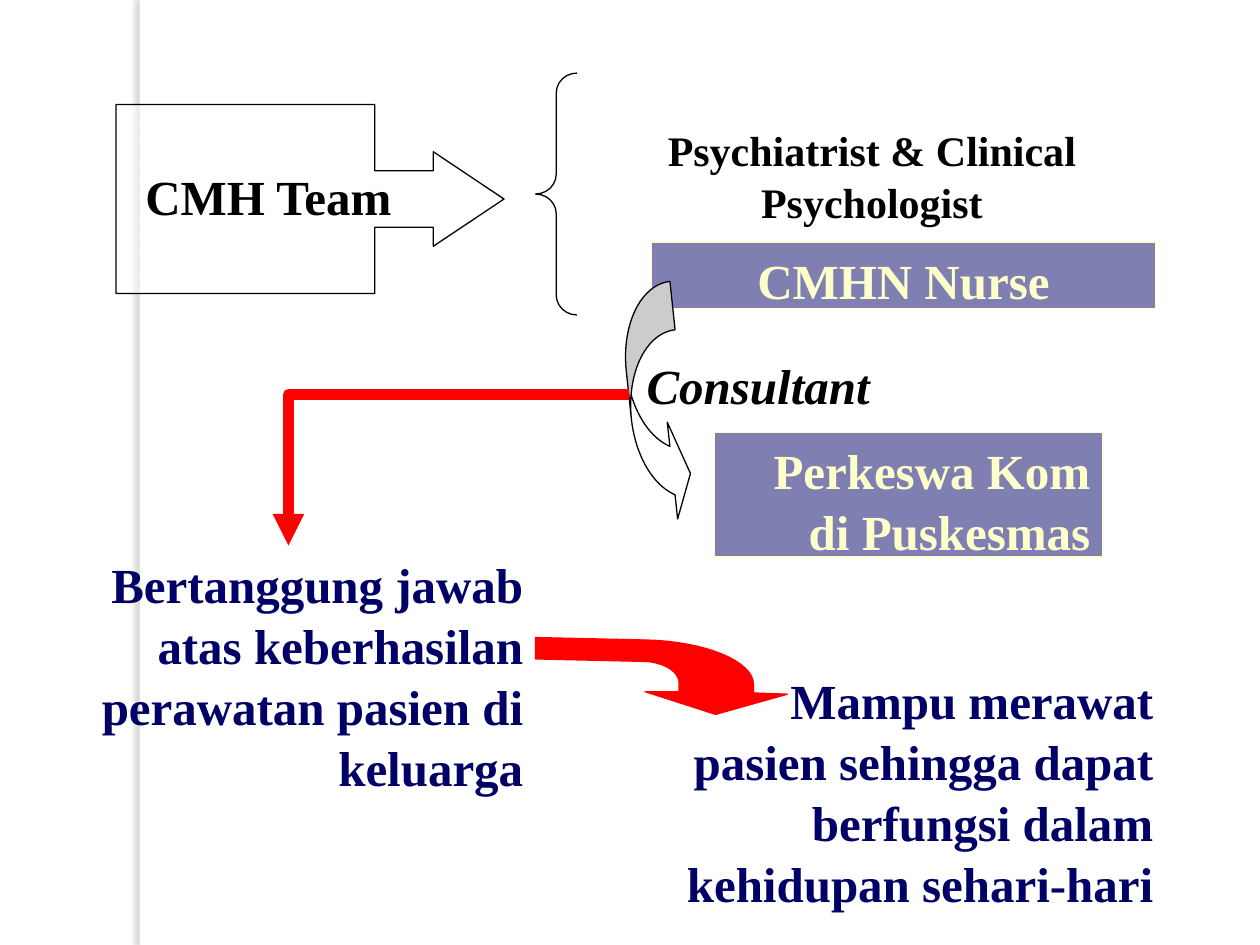
from lxml import etree
from pptx import Presentation
from pptx.dml.color import RGBColor
from pptx.enum.shapes import MSO_CONNECTOR, MSO_SHAPE
from pptx.enum.text import MSO_ANCHOR, MSO_AUTO_SIZE, PP_ALIGN
from pptx.oxml import parse_xml
from pptx.oxml.ns import nsdecls, qn
from pptx.util import Inches, Pt

RECT, BRACE = MSO_SHAPE.RECTANGLE, MSO_SHAPE.LEFT_BRACE
CALLOUT, CURVED_ARROW = MSO_SHAPE.RIGHT_ARROW_CALLOUT, MSO_SHAPE.CURVED_UP_ARROW
ELBOW = MSO_CONNECTOR.ELBOW
CENTER, RIGHT = PP_ALIGN.CENTER, PP_ALIGN.RIGHT
TOP, GROW = MSO_ANCHOR.TOP, MSO_AUTO_SIZE.SHAPE_TO_FIT_TEXT

WHITE = RGBColor(0xFF, 0xFF, 0xFF)
BLACK = RGBColor(0x00, 0x00, 0x00)
NAVY = RGBColor(0x00, 0x00, 0x66)
CREAM = RGBColor(0xFF, 0xFF, 0xCC)
RED = RGBColor(0xFF, 0x00, 0x00)


def bezier(start, c1, c2, end, steps=16):
    """Points along a cubic curve, without its start."""
    points = []
    for i in range(1, steps + 1):
        t = i / steps
        u = 1 - t
        points.append(tuple(u**3 * a + 3 * u * u * t * b + 3 * u * t * t * c + t**3 * d
                            for a, b, c, d in zip(start, c1, c2, end)))
    return points


class Diagram:
    font = "Times New Roman"
    frame = {"word_wrap": True, "auto_size": GROW, "vertical_anchor": TOP,
             "margin_left": Inches(0.1), "margin_right": Inches(0.1),
             "margin_top": Inches(0.05), "margin_bottom": 0}

    def __init__(self, slide):
        self.s = slide

    def paint(self, sp, fill=None, line=None, alpha=None):
        sp.shadow.inherit = False
        if fill is None:
            sp.fill.background()
        else:
            sp.fill.solid()
            sp.fill.fore_color.rgb = fill
        if alpha:
            clr = sp.fill._xPr.find(qn("a:solidFill"))[0]
            etree.SubElement(clr, qn("a:alpha"), val=str(alpha * 1000))
        if line is None:
            sp.line.fill.background()
        else:
            sp.line.color.rgb = line
            sp.line.width = Pt(0.75)

    def shape(self, kind, at, fill=None, line=None, alpha=None, adj=(), rotation=0):
        sp = self.s.shapes.add_shape(kind, *map(Inches, at))
        self.paint(sp, fill, line, alpha)
        for i, value in enumerate(adj):
            sp.adjustments[i] = value
        sp.rotation = rotation
        return sp

    def set_text(self, sp, text, align, color, size=28, italic=False):
        tf = sp.text_frame
        for name, value in self.frame.items():
            setattr(tf, name, value)
        p = tf.paragraphs[0]
        p.alignment = align
        p.line_spacing = 1.04
        before = etree.SubElement(p._p.get_or_add_pPr(), qn("a:spcBef"))
        etree.SubElement(before, qn("a:spcPct"), val="50000")
        r = p.add_run()
        r.text = text
        font = {"name": self.font, "size": Pt(size), "bold": True, "italic": italic}
        for name, value in font.items():
            setattr(r.font, name, value)
        r.font.color.rgb = color

    def label(self, text, at, align, color=BLACK, **style):
        self.set_text(self.s.shapes.add_textbox(*map(Inches, at)), text, align, color, **style)

    def box(self, text, at, align):
        self.set_text(self.shape(RECT, at, NAVY, CREAM, alpha=50), text, align, CREAM)

    def outline(self, points, color):
        points = [(Inches(x), Inches(y)) for x, y in points]
        fb = self.s.shapes.build_freeform(*points[0])
        fb.add_line_segments(points[1:], close=True)
        self.paint(fb.convert_to_shape(), color, color)

    def elbow(self, start, end, color, width):
        c = self.s.shapes.add_connector(ELBOW, *map(Inches, start + end))
        c.line.color.rgb = color
        c.line.width = Pt(width)
        spPr = c._element.spPr
        spPr.find(qn("a:prstGeom")).set("prst", "bentConnector2")
        etree.SubElement(spPr.find(qn("a:ln")), qn("a:tailEnd"), type="triangle")
        etree.SubElement(spPr, qn("a:effectLst"))

    def side_strip(self, at):
        sp = self.shape(RECT, at, WHITE)
        effects = sp._element.spPr.find(qn("a:effectLst"))
        effects.append(parse_xml(
            f'<a:outerShdw {nsdecls("a")} blurRad="{Pt(3)}" dist="{Pt(3)}" dir="10800000" '
            'algn="tl" rotWithShape="0"><a:srgbClr val="736F63"><a:alpha val="25000"/>'
            '</a:srgbClr></a:outerShdw>'))


def main():
    prs = Presentation()
    prs.slide_width, prs.slide_height = Inches(10), Inches(7.5)
    d = Diagram(prs.slides.add_slide(prs.slide_layouts[6]))

    # Shaded strip at the left
    d.side_strip((1.11, 0, 0.08, 7.5))

    # Team and its members
    d.shape(CALLOUT, (0.92, 0.83, 3.08, 1.5), WHITE, BLACK, 50, (0.3, 0.25, 0.374, 0.667))
    d.label("CMH Team", (0.92, 1.25, 2.42, 0.52), CENTER)
    d.box("Perkeswa Kom di Puskesmas", (5.67, 3.43, 3.08, 0.99), RIGHT)
    d.label("Psychiatrist & Clinical Psychologist", (4.67, 0.92, 4.5, 0.85), CENTER, size=24)
    d.box("CMHN Nurse", (5.17, 1.92, 4, 0.53), CENTER)

    # Consultant link
    d.shape(CURVED_ARROW, (4.25, 3, 1.92, 0.42), WHITE, BLACK,
            adj=(0.92, 1.84, 0.333), rotation=83.9)
    d.label("Consultant", (4.92, 2.75, 2.08, 0.52), RIGHT, italic=True)
    d.shape(BRACE, (4.25, 0.58, 0.33, 1.92), line=BLACK, adj=(0.479, 0.5))

    # Outcomes
    d.label("Bertanggung jawab atas keberhasilan perawatan pasien di keluarga",
            (0.33, 4.33, 3.92, 1.92), RIGHT, NAVY)
    d.label("Mampu merawat pasien sehingga dapat berfungsi dalam kehidupan sehari-hari",
            (5.17, 5.25, 4.08, 1.92), RIGHT, NAVY)

    # Red arrows
    outer = bezier((5.98, 5.43), (5.98, 5.25), (5.6, 5.09), (5.13, 5.08))
    inner = bezier((5.13, 5.25), (5.27, 5.26), (5.39, 5.33), (5.39, 5.42))
    d.outline([(5.68, 5.67), (6.25, 5.51), (5.98, 5.5), (5.98, 5.43), *outer,
               (4.25, 5.06), (4.25, 5.23), (5.13, 5.25), *inner,
               (5.39, 5.49), (5.12, 5.49)], RED)
    d.elbow((4.99, 3.13), (2.29, 4.33), RED, 6)

    prs.save("out.pptx")


if __name__ == "__main__":
    main()
